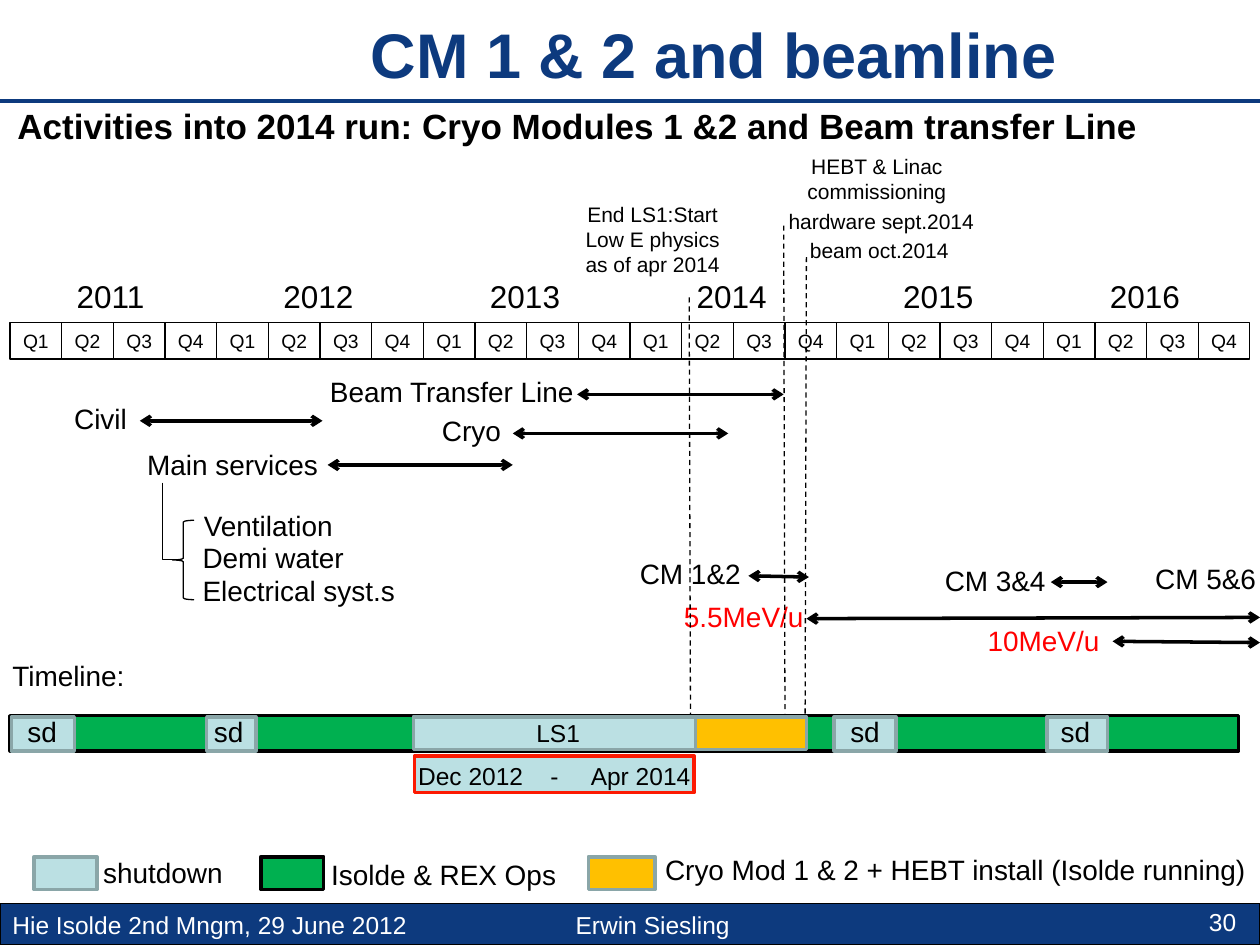
from dataclasses import dataclass

from lxml import etree
from pptx import Presentation, util as u
from pptx.dml.color import RGBColor
from pptx.enum import dml, shapes, text
from pptx.oxml import ns

LEFT, CENTER, RIGHT = text.PP_ALIGN.LEFT, text.PP_ALIGN.CENTER, text.PP_ALIGN.RIGHT
SHAPE = shapes.MSO_SHAPE


@dataclass(frozen=True)
class Theme:
    font: str = "Arial"
    navy: str = "0D3A7E"
    black: str = "000000"
    white: str = "FFFFFF"
    red: str = "FF0000"
    alert: str = "FC1A02"
    shutdown: str = "BBE0E3"
    shutdown_edge: str = "8AA6A8"
    running: str = "00B050"
    install: str = "FFC000"
    title: float = 36
    heading: float = 20
    year: float = 18
    label: float = 16
    small: float = 14
    note: float = 12
    quarter: float = 11
    thin: float = 0.75
    rule: float = 2.25
    thick: float = 2


class Painter:
    def __init__(self, theme, page):
        self.theme = theme
        self.page = page

    def stroke(self, line, color, width):
        line.color.rgb = RGBColor.from_string(color)
        line.width = u.Pt(width)

    def set_text(self, frame, words, size, color, align, bold=False, tabs=()):
        para = frame.paragraphs[0]
        para.text = words
        para.alignment = align
        if tabs:
            stops = etree.SubElement(para._p.get_or_add_pPr(), ns.qn("a:tabLst"))
            for stop in tabs:
                etree.SubElement(stops, ns.qn("a:tab"), pos=str(u.Inches(stop)), algn="l")
        para.font.name = self.theme.font
        para.font.size = u.Pt(size)
        para.font.bold = bold
        para.font.color.rgb = RGBColor.from_string(color)
        return para

    def label(self, words, left, top, width, height=0.37, size=None, color=None,
              align=LEFT, bold=False, tabs=()):
        box = self.page.shapes.add_textbox(*map(u.Inches, (left, top, width, height)))
        frame = box.text_frame
        frame.word_wrap = True
        if align == LEFT:
            frame.margin_right = 0
        return self.set_text(frame, words, size or self.theme.label,
                             color or self.theme.black, align, bold, tabs)

    def block(self, left, top, width, height, fill=None, edge=None, weight=None,
              kind=SHAPE.RECTANGLE):
        box = self.page.shapes.add_shape(kind, *map(u.Inches, (left, top, width, height)))
        box.shadow.inherit = False
        if fill:
            box.fill.solid()
            box.fill.fore_color.rgb = RGBColor.from_string(fill)
        else:
            box.fill.background()
        self.stroke(box.line, edge or self.theme.black, weight or self.theme.thin)
        return box

    def cell(self, words, left, top, width, height):
        frame = self.block(left, top, width, height).text_frame
        frame.margin_left = frame.margin_right = 0
        frame.vertical_anchor = text.MSO_ANCHOR.MIDDLE
        self.set_text(frame, words, self.theme.quarter, self.theme.black, CENTER)

    def line(self, x1, y1, x2, y2, color=None, weight=None, dashed=False, arrows=False):
        link = self.page.shapes.add_connector(
            shapes.MSO_CONNECTOR.STRAIGHT, *map(u.Inches, (x1, y1, x2, y2)))
        self.stroke(link.line, color or self.theme.black, weight or self.theme.thin)
        if dashed:
            link.line.dash_style = dml.MSO_LINE.DASH
        if arrows:
            for end in ("a:headEnd", "a:tailEnd"):
                etree.SubElement(link.line._get_or_add_ln(), ns.qn(end), type="arrow")
        etree.SubElement(link._element.spPr, ns.qn("a:effectLst"))

    def outline(self, start, *points):
        pen = self.page.shapes.build_freeform(*map(u.Inches, start))
        pen.add_line_segments([tuple(map(u.Inches, p)) for p in points], close=False)
        bend = pen.convert_to_shape()
        bend.shadow.inherit = False
        bend.fill.background()
        self.stroke(bend.line, self.theme.black, self.theme.thin)


def draw_frame(art):
    t = art.theme
    art.block(0, 7.17, 10, 0.33, t.navy)
    art.label("Hie Isolde 2nd Mngm, 29 June 2012\tErwin Siesling", 0, 7.17, 7.49, 0.34,
              t.small, t.white, tabs=[4.47])
    art.line(0, 0.8, 10, 0.8, t.navy, t.rule)
    art.label("30", 7.58, 7.15, 2.33, 0.34, t.small, t.white, RIGHT)
    art.label("CM 1 & 2 and beamline", 2.06, 0.07, 7.21, 0.71, t.title, t.navy, CENTER, True)
    heading = art.label("Activities into 2014 run: Cryo Modules 1 &2 and Beam transfer Line",
                        0.04, 0.82, 9.5, 0.4, t.heading, bold=True)
    heading.line_spacing = 0.9


def draw_calendar(art):
    left, quarter = 0.08, 0.41
    year_pitch = 1.64
    for i in range(6):
        for q in range(4):
            art.cell(f"Q{q + 1}", left + i * year_pitch + q * quarter, 2.56, quarter, 0.29)
        art.label(str(2011 + i), 0.51 + i * year_pitch, 2.15, 0.85, 0.4, art.theme.year)


def draw_activities(art):
    t = art.theme
    for words, left, top, width, color in [
        ("Civil", 0.49, 3.14, 0.62, t.black),
        ("Main services", 1.07, 3.5, 1.76, t.black),
        ("Cryo", 3.41, 3.23, 0.77, t.black),
        ("Beam Transfer Line", 2.52, 2.92, 2.69, t.black),
        ("CM 1&2", 4.98, 4.37, 1.21, t.black),
        ("CM 3&4", 7.4, 4.42, 1.03, t.black),
        ("CM 5&6", 9.07, 4.41, 1.03, t.black),
        ("5.5MeV/u", 5.33, 4.71, 1.21, t.red),
        ("10MeV/u", 7.74, 4.9, 1.14, t.red),
        ("Ventilation", 1.52, 3.99, 1.76, t.black),
        ("Demi water", 1.51, 4.24, 1.76, t.black),
        ("Electrical syst.s", 1.51, 4.5, 1.76, t.black),
    ]:
        art.label(words, left, top, width, color=color)
    for start, y1, end, y2 in [
        (1.11, 3.34, 2.56, 3.34),
        (2.6, 3.69, 4.07, 3.69),
        (4.07, 3.44, 5.78, 3.44),
        (4.58, 3.13, 6.22, 3.13),
        (5.94, 4.57, 6.42, 4.58),
        (8.34, 4.62, 8.79, 4.62),
        (6.4, 4.91, 10, 4.9),
        (8.83, 5.09, 10, 5.1),
    ]:
        art.line(start, y1, end, y2, weight=t.thick, arrows=True)
    art.block(1.37, 4.13, 0.17, 0.63, kind=SHAPE.LEFT_BRACE)
    art.outline((1.29, 3.83), (1.29, 4.44), (1.42, 4.44))


def draw_timeline(art):
    t = art.theme
    shutdown = (t.shutdown, t.shutdown_edge, t.thick)
    running = (t.running, t.black, t.thick)
    install = (t.install, t.shutdown_edge, t.thick)

    art.label("Timeline:", 0, 5.18, 1.47)
    art.block(3.29, 6, 2.22, 0.29, t.shutdown, t.alert, t.thick)
    art.label("Dec 2012\t-\tApr 2014", 3.22, 5.99, 2.42, 0.34, t.small, tabs=[1.05, 1.37])
    art.block(0.08, 5.68, 9.75, 0.28, *running)
    for left, width, words_left in [
        (0.09, 0.5, 0.12), (1.64, 0.39, 1.6), (6.62, 0.49, 6.65), (8.31, 0.48, 8.32),
    ]:
        art.block(left, 5.69, width, 0.27, *shutdown)
        art.label("sd", words_left, 5.62, 0.5)
    art.block(3.28, 5.69, 2.65, 0.26, *shutdown)
    art.label("LS1", 3.68, 5.65, 1.5, 0.34, t.small, align=CENTER)
    art.block(5.52, 5.69, 0.88, 0.26, *install)

    for left, width, style, words, words_left, words_top, words_width in [
        (0.27, 0.5, shutdown, "shutdown", 0.72, 6.74, 1.3),
        (2.07, 0.5, running, "Isolde & REX Ops", 2.53, 6.76, 2),
        (4.67, 0.53, install, "Cryo Mod 1 & 2 + HEBT install (Isolde running)", 5.18, 6.72, 4.98),
    ]:
        art.block(left, 6.8, width, 0.26, *style)
        art.label(words, words_left, words_top, words_width)


def draw_milestones(art):
    note = art.theme.note
    for x1, y1, x2, y2 in [
        (5.47, 2.36, 5.48, 5.67), (6.22, 1.79, 6.23, 5.66), (6.4, 2.04, 6.39, 5.68),
    ]:
        art.line(x1, y1, x2, y2, dashed=True)
    art.label("End LS1:Start Low E physics as of apr 2014", 4.54, 1.55, 1.28, 0.71, note,
              align=CENTER)
    art.label("HEBT & Linac commissioning", 6.19, 1.17, 1.54, 0.5, note, align=CENTER)
    art.label("hardware sept.2014", 6.16, 1.61, 2.55, 0.3, note)
    art.label("beam oct.2014", 6.33, 1.84, 1.54, 0.3, note)


def main():
    deck = Presentation()
    deck.slide_width, deck.slide_height = u.Inches(10), u.Inches(7.5)
    page = deck.slides.add_slide(deck.slide_layouts[6])
    art = Painter(Theme(), page)
    for draw in (draw_frame, draw_calendar, draw_activities, draw_timeline, draw_milestones):
        draw(art)
    deck.save("out.pptx")


if __name__ == "__main__":
    main()
